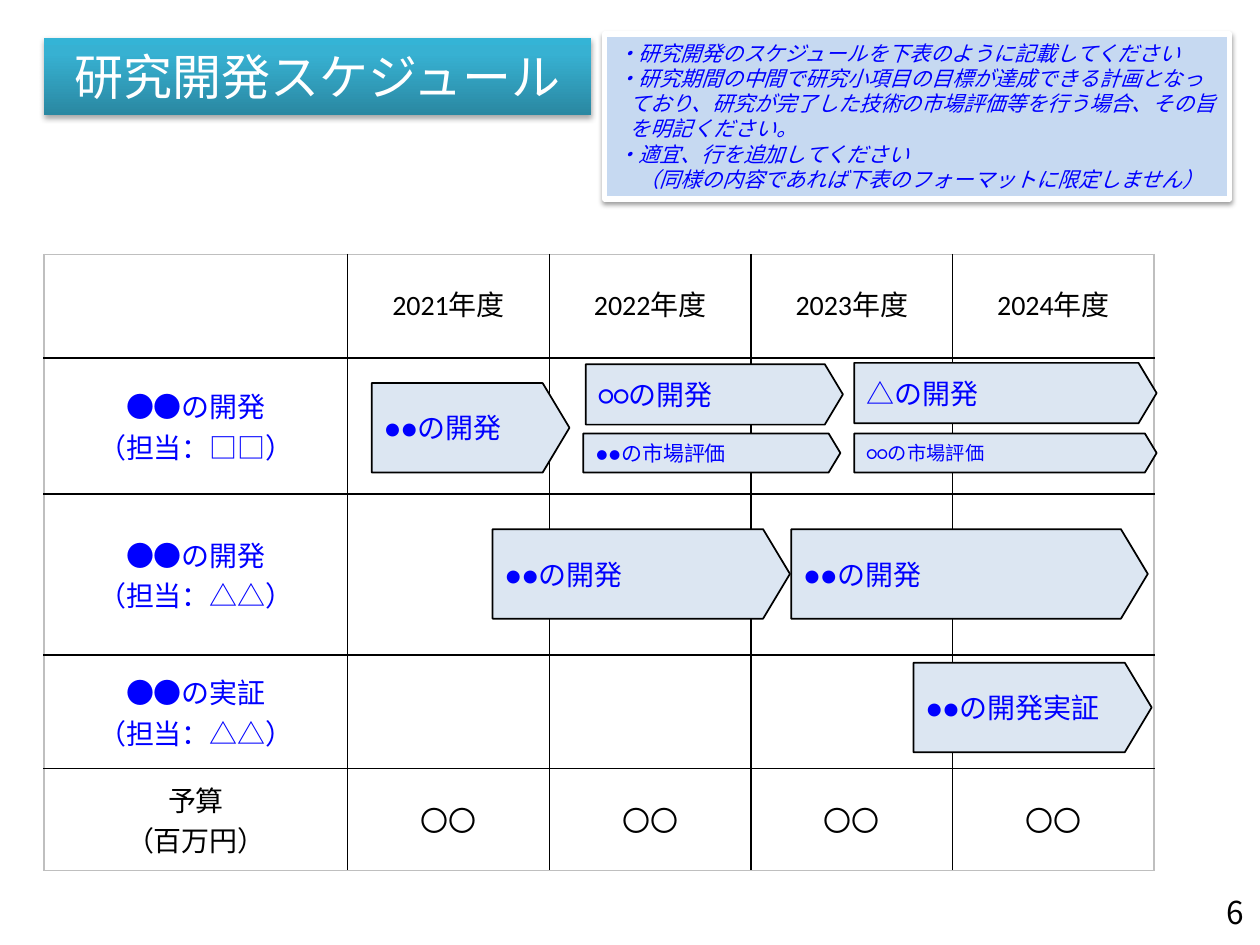
"""Build the research and development schedule slide."""
from lxml.etree import SubElement
from pptx import Presentation
from pptx.dml.color import RGBColor
from pptx.enum.shapes import MSO_SHAPE
from pptx.enum.text import MSO_ANCHOR, MSO_AUTO_SIZE, PP_ALIGN
from pptx.oxml import parse_xml
from pptx.oxml.ns import nsdecls, qn
from pptx.util import Inches, Pt

COLORS = {
    "black": "000000", "white": "FFFFFF", "blue": "0000FF", "grid": "BFBFBF",
    "arrow": "DCE6F2", "note": "C6D9F1",
    "title_dark": "2A88A2", "title_mid": "37B1D2", "title_light": "34B4D6",
}
LATIN, JAPANESE = "Calibri", "Noto Sans CJK JP"


def write(frame, lines, size, color, font=LATIN, align=PP_ALIGN.LEFT, indent=0, italic=None):
    """Write one paragraph per line with the given format."""
    for index, line in enumerate(lines):
        paragraph = frame.add_paragraph() if index else frame.paragraphs[0]
        paragraph.alignment = align
        if indent:
            properties = paragraph._p.get_or_add_pPr()
            properties.set("marL", str(Inches(indent)))
            properties.set("indent", str(-Inches(indent)))
        run = paragraph.add_run()
        run.text = line
        run.font.size = Pt(size)
        run.font.name = font
        run.font.italic = italic
        run.font.color.rgb = RGBColor.from_string(COLORS[color])
        SubElement(run._r.get_or_add_rPr(), qn("a:ea"), typeface=font)


def add_shadow(shape, opacity, distance):
    """Give the shape a soft shadow straight below it."""
    shape.shadow.inherit = False
    effects = shape._element.spPr.find(qn("a:effectLst"))
    effects.append(parse_xml(
        f'<a:outerShdw {nsdecls("a")} blurRad="{Pt(3.1)}" dist="{Pt(distance)}" '
        f'dir="5400000" rotWithShape="0"><a:srgbClr val="{COLORS["black"]}">'
        f'<a:alpha val="{opacity * 1000}"/></a:srgbClr></a:outerShdw>'))


presentation = Presentation()
presentation.slide_width, presentation.slide_height = Inches(10), Inches(7.5)
slide = presentation.slides.add_slide(presentation.slide_layouts[5])

title = slide.shapes.title
title.left, title.top, title.width, title.height = map(Inches, (0.35, 0.3, 4.34, 0.61))
title.fill.gradient()
title.fill.gradient_angle = 90
stops = title._element.spPr.find(".//" + qn("a:gsLst"))
stops.clear()
for position, color in ((0, "title_dark"), (80, "title_mid"), (100, "title_light")):
    stop = SubElement(stops, qn("a:gs"), pos=str(position * 1000))
    SubElement(stop, qn("a:srgbClr"), val=COLORS[color])
add_shadow(title, 35, 1.8)
title.text_frame.auto_size = MSO_AUTO_SIZE.NONE
title.text_frame.vertical_anchor = MSO_ANCHOR.MIDDLE
write(title.text_frame, ["研究開発スケジュール"], 28, "white", align=PP_ALIGN.CENTER)

column_widths = [2.41] + [1.6] * 4
row_heights = [0.82, 1.08, 1.28, 0.9, 0.81]
rows = [
    [[]] + [[f"{year}年度"] for year in range(2021, 2025)],
    [["●●の開発", "（担当：□□）"]] + [[]] * 4,
    [["●●の開発", "（担当：△△）"]] + [[]] * 4,
    [["●●の実証", "（担当：△△）"]] + [[]] * 4,
    [["予算", "（百万円）"]] + [["〇〇"]] * 4,
]
last_row, last_column = len(rows) - 1, len(column_widths) - 1
table = slide.shapes.add_table(
    len(rows), len(column_widths), Inches(0.35), Inches(2.02),
    Inches(sum(column_widths)), Inches(sum(row_heights))).table
table.first_row = table.horz_banding = False
for column, width in zip(table.columns, column_widths):
    column.width = Inches(width)
for row, height in zip(table.rows, row_heights):
    row.height = Inches(height)

for row_index, row in enumerate(rows):
    for column_index, lines in enumerate(row):
        cell = table.cell(row_index, column_index)
        outer_edges = {
            "a:lnL": column_index == 0, "a:lnR": column_index == last_column,
            "a:lnT": row_index == 0, "a:lnB": row_index == last_row,
        }
        for edge, is_outer in outer_edges.items():
            line = SubElement(cell._tc.get_or_add_tcPr(), qn(edge), w=str(Pt(1)))
            fill = SubElement(line, qn("a:solidFill"))
            SubElement(fill, qn("a:srgbClr"), val=COLORS["grid" if is_outer else "black"])
        cell.fill.background()
        cell.margin_left = cell.margin_right = cell.margin_top = cell.margin_bottom = 0
        cell.vertical_anchor = MSO_ANCHOR.MIDDLE
        write(cell.text_frame, lines, 16,
              "blue" if 0 < row_index < last_row else "black",
              JAPANESE if row_index else LATIN, PP_ALIGN.CENTER)

arrows = [
    (2.95, 3.04, 1.57, 0.71, "●●の開発", 16),
    (4.65, 2.89, 2.04, 0.48, "○○の開発", 16),
    (4.63, 3.44, 2.04, 0.31, "●●の市場評価", 12),
    (6.78, 2.88, 2.4, 0.48, "△の開発", 16),
    (6.78, 3.44, 2.4, 0.31, "○○の市場評価", 11),
    (3.91, 4.2, 2.36, 0.71, "●●の開発", 16),
    (6.28, 4.2, 2.83, 0.71, "●●の開発", 16),
    (7.25, 5.26, 1.89, 0.71, "●●の開発実証", 16),
]
for left, top, width, height, label, size in arrows:
    arrow = slide.shapes.add_shape(
        MSO_SHAPE.PENTAGON, Inches(left), Inches(top), Inches(width), Inches(height))
    arrow.adjustments[0] = 0.3
    arrow.shadow.inherit = False
    arrow.fill.solid()
    arrow.fill.fore_color.rgb = RGBColor.from_string(COLORS["arrow"])
    arrow.line.color.rgb = RGBColor.from_string(COLORS["black"])
    arrow.line.width = Pt(1)
    arrow.text_frame.vertical_anchor = MSO_ANCHOR.MIDDLE
    write(arrow.text_frame, [label], size, "blue", indent=0.1)

note = slide.shapes.add_shape(
    MSO_SHAPE.RECTANGLE, Inches(4.8), Inches(0.27), Inches(4.96), Inches(1.31))
note.fill.solid()
note.fill.fore_color.rgb = RGBColor.from_string(COLORS["note"])
note.line.color.rgb = RGBColor.from_string(COLORS["white"])
note.line.width = Pt(3)
add_shadow(note, 38, 1.6)
note.text_frame.word_wrap = True
note.text_frame.auto_size = MSO_AUTO_SIZE.SHAPE_TO_FIT_TEXT
note.text_frame.vertical_anchor = MSO_ANCHOR.TOP
write(note.text_frame, [
    "・研究開発のスケジュールを下表のように記載してください",
    "・研究期間の中間で研究小項目の目標が達成できる計画となっており、"
    "研究が完了した技術の市場評価等を行う場合、その旨を明記ください。",
    "・適宜、行を追加してください",
    "　（同様の内容であれば下表のフォーマットに限定しません）",
], 12, "blue", indent=0.1, italic=True)

page_number = slide.shapes.add_textbox(Inches(9.29), Inches(7.11), Inches(0.58), Inches(0.25))
frame = page_number.text_frame
frame.margin_left = frame.margin_right = frame.margin_top = frame.margin_bottom = 0
frame.word_wrap = False
frame.vertical_anchor = MSO_ANCHOR.MIDDLE
write(frame, ["6"], 18, "black", JAPANESE, PP_ALIGN.RIGHT)

presentation.save("out.pptx")
